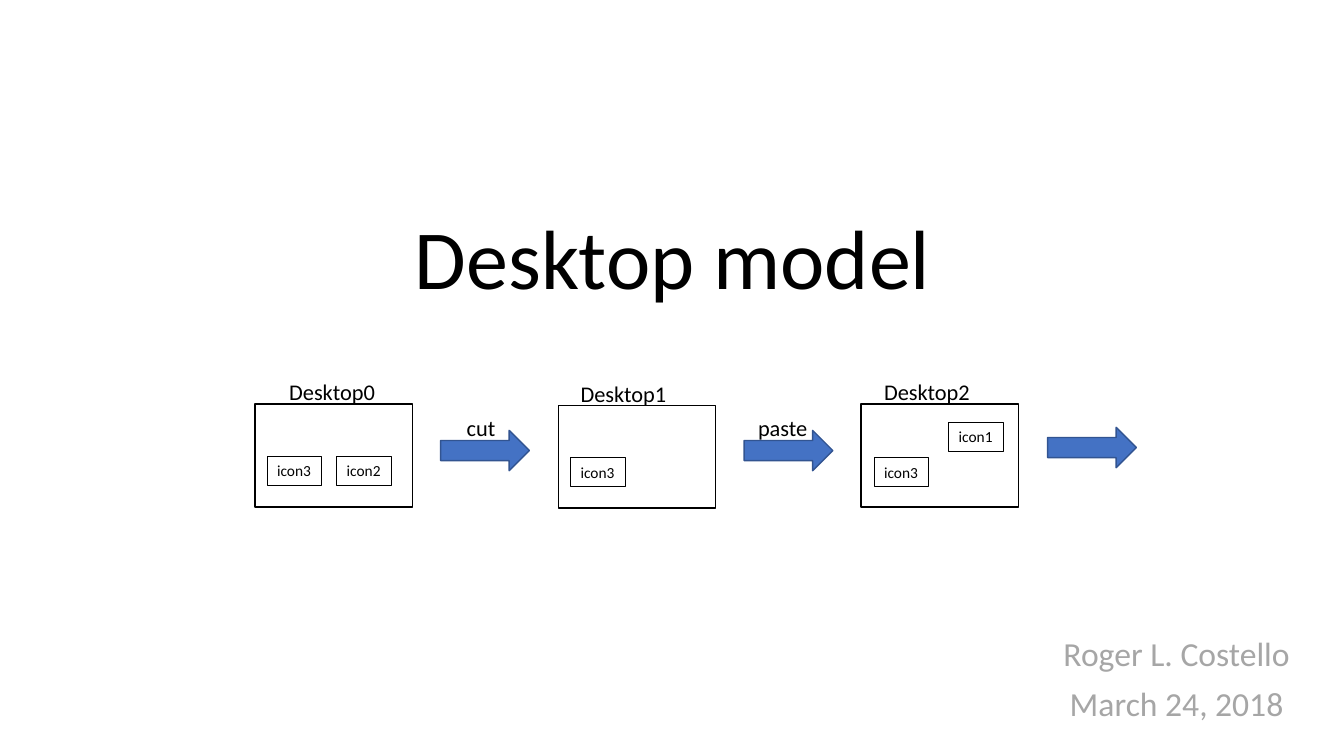
"""Build the Desktop model title slide with its cut and paste sequence."""
from dataclasses import dataclass

from pptx import Presentation
from pptx.dml.color import RGBColor
from pptx.enum.shapes import MSO_SHAPE
from pptx.enum.text import MSO_ANCHOR, MSO_AUTO_SIZE, PP_ALIGN
from pptx.shapes.autoshape import Shape
from pptx.slide import Slide
from pptx.text.text import TextFrame
from pptx.util import Emu, Pt

PX = 9144


@dataclass(frozen=True)
class Theme:
    font: str = "Calibri"
    ink: RGBColor = RGBColor(0x00, 0x00, 0x00)
    muted: RGBColor = RGBColor(0xA6, 0xA6, 0xA6)
    arrow: RGBColor = RGBColor(0x44, 0x72, 0xC4)
    arrow_edge: RGBColor = RGBColor(0x32, 0x54, 0x91)
    title_size: int = 60
    author_size: int = 24
    label_size: int = 16
    icon_size: int = 11
    edge: float = 1
    icon_edge: float = 0.75


@dataclass(frozen=True)
class Box:
    x: int
    y: int
    w: int
    h: int

    def emu(self) -> tuple[Emu, ...]:
        return tuple(Emu(v * PX) for v in (self.x, self.y, self.w, self.h))


@dataclass(frozen=True)
class Label:
    text: str
    box: Box


@dataclass(frozen=True)
class Desktop:
    box: Box
    label: Label
    icons: tuple[Label, ...]


def icon(text: str, x: int, y: int) -> Label:
    return Label(text, Box(x, y, 54, 29))


def desktop(name: str, x: int, y: int, label_x: int, label_y: int, *icons: Label) -> Desktop:
    return Desktop(Box(x, y, 156, 102), Label(name, Box(label_x, label_y, 106, 37)), icons)


THEME = Theme()
TITLE = Label("Desktop model", Box(167, 168, 1000, 142))
AUTHOR = Label("Roger L. Costello\nMarch 24, 2018", Box(1025, 627, 284, 102))
DESKTOPS = (
    desktop("Desktop0", 253, 401, 277, 370, icon("icon3", 265, 453), icon("icon2", 334, 453)),
    desktop("Desktop1", 554, 402, 566, 372, icon("icon3", 566, 454)),
    desktop("Desktop2", 854, 401, 867, 370, icon("icon3", 867, 454), icon("icon1", 941, 419)),
)
ARROWS = tuple(Box(437 + 301 * i, y, 88, 40) for i, y in enumerate((427, 427, 424)))
ACTIONS = (Label("cut", Box(453, 406, 49, 37)), Label("paste", Box(742, 406, 70, 37)))


def format_text(tf: TextFrame, size: int, color: RGBColor, align: PP_ALIGN) -> None:
    for p in tf.paragraphs:
        p.alignment = align
        for r in p.runs:
            r.font.name = THEME.font
            r.font.size = Pt(size)
            r.font.color.rgb = color


def write_label(sp: Shape, text: str, size: int) -> None:
    tf = sp.text_frame
    tf.text = text
    tf.word_wrap = False
    tf.auto_size = MSO_AUTO_SIZE.SHAPE_TO_FIT_TEXT
    tf.vertical_anchor = MSO_ANCHOR.TOP
    format_text(tf, size, THEME.ink, PP_ALIGN.LEFT)


def add_outline(s: Slide, box: Box, width: float) -> Shape:
    sp = s.shapes.add_shape(MSO_SHAPE.RECTANGLE, *box.emu())
    sp.shadow.inherit = False
    sp.fill.background()
    sp.line.color.rgb = THEME.ink
    sp.line.width = Pt(width)
    return sp


def add_label(s: Slide, label: Label) -> None:
    write_label(s.shapes.add_textbox(*label.box.emu()), label.text, THEME.label_size)


def add_desktop(s: Slide, item: Desktop) -> None:
    add_outline(s, item.box, THEME.edge)
    add_label(s, item.label)
    for child in item.icons:
        write_label(add_outline(s, child.box, THEME.icon_edge), child.text, THEME.icon_size)


def add_arrow(s: Slide, box: Box) -> None:
    sp = s.shapes.add_shape(MSO_SHAPE.RIGHT_ARROW, *box.emu())
    sp.shadow.inherit = False
    sp.fill.solid()
    sp.fill.fore_color.rgb = THEME.arrow
    sp.line.color.rgb = THEME.arrow_edge
    sp.line.width = Pt(THEME.edge)


def set_title(s: Slide, label: Label) -> None:
    sp = s.shapes.title
    sp.left, sp.top, sp.width, sp.height = label.box.emu()
    tf = sp.text_frame
    tf.text = label.text
    tf.auto_size = MSO_AUTO_SIZE.NONE
    tf.vertical_anchor = MSO_ANCHOR.BOTTOM
    tf.paragraphs[0].line_spacing = 0.9
    format_text(tf, THEME.title_size, THEME.ink, PP_ALIGN.CENTER)


def add_author(s: Slide, label: Label) -> None:
    tf = s.shapes.add_textbox(*label.box.emu()).text_frame
    tf.text = label.text
    tf.word_wrap = True
    for p in tf.paragraphs:
        p.line_spacing = 0.9
        p.space_before = Pt(10)
    format_text(tf, THEME.author_size, THEME.muted, PP_ALIGN.CENTER)


def main() -> None:
    prs = Presentation()
    prs.slide_width, prs.slide_height = Emu(1333 * PX), Emu(750 * PX)
    s = prs.slides.add_slide(prs.slide_layouts[5])
    set_title(s, TITLE)
    add_author(s, AUTHOR)
    for item in DESKTOPS:
        add_desktop(s, item)
    for box in ARROWS:
        add_arrow(s, box)
    for action in ACTIONS:
        add_label(s, action)
    prs.save("out.pptx")


if __name__ == "__main__":
    main()
